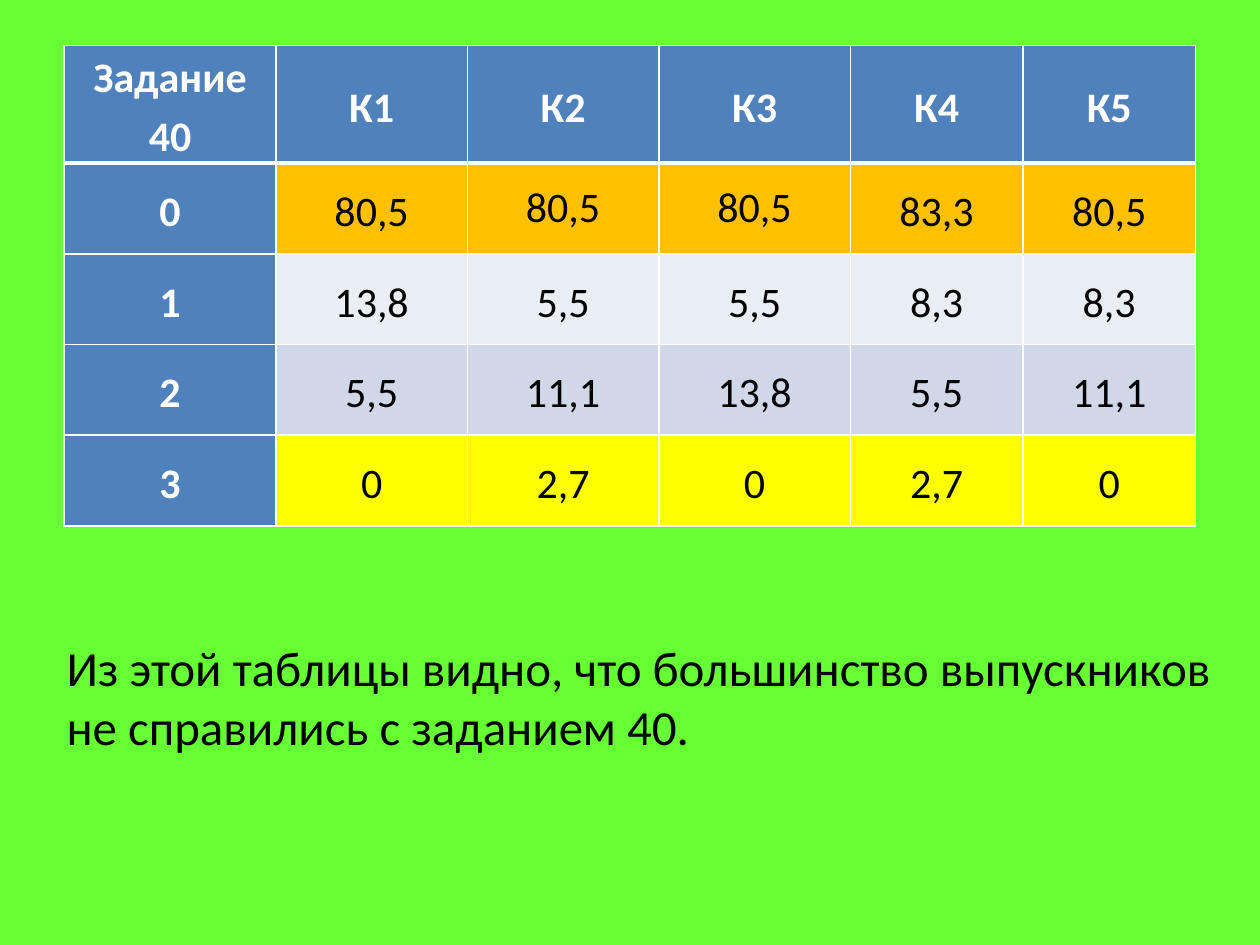
from dataclasses import dataclass

from lxml.etree import SubElement
from pptx import Presentation
from pptx.dml.color import RGBColor
from pptx.enum.text import MSO_ANCHOR, PP_ALIGN
from pptx.oxml.ns import qn
from pptx.util import Inches, Pt

FONT = "Calibri"
WHITE, BLACK, BLUE, GREEN = "FFFFFF", "000000", "4F81BD", "66FF33"
COLUMN_WIDTHS = (1.68, 1.52, 1.52, 1.52, 1.37, 1.37)
ROW_HEIGHT = 0.72
CELL_FORMAT = {
    "margin_left": Inches(0.07),
    "margin_right": Inches(0.07),
    "margin_top": 0,
    "margin_bottom": 0,
    "vertical_anchor": MSO_ANCHOR.MIDDLE,
}
SINGLE_SPACED = {(1, 2), (1, 3)}


@dataclass(frozen=True)
class ScoreRow:
    labels: tuple[str, ...]
    fill: str


SCORES = (
    ScoreRow(("Задание 40", "К1", "К2", "К3", "К4", "К5"), BLUE),
    ScoreRow(("0", "80,5", "80,5", "80,5", "83,3", "80,5"), "FFC000"),
    ScoreRow(("1", "13,8", "5,5", "5,5", "8,3", "8,3"), "E9EDF4"),
    ScoreRow(("2", "5,5", "11,1", "13,8", "5,5", "11,1"), "D0D8E8"),
    ScoreRow(("3", "0", "2,7", "0", "2,7", "0"), "FFFF00"),
)
CONCLUSION = (
    "Из этой таблицы видно, что большинство выпускников "
    "не справились с заданием 40."
)


def paint(fill, color: str) -> None:
    fill.solid()
    fill.fore_color.rgb = RGBColor.from_string(color)


def write(paragraph, text: str, size: int, color: str, bold: bool = False) -> None:
    run = paragraph.add_run()
    run.text = text
    for attribute, setting in {"name": FONT, "size": Pt(size), "bold": bold}.items():
        setattr(run.font, attribute, setting)
    run.font.color.rgb = RGBColor.from_string(color)


def add_borders(cell, widths: dict[str, int]) -> None:
    properties = cell._tc.get_or_add_tcPr()
    for side, width in widths.items():
        line = SubElement(properties, qn(f"a:ln{side}"), w=str(Pt(width)))
        solid = SubElement(line, qn("a:solidFill"))
        SubElement(solid, qn("a:srgbClr"), val=WHITE)


def format_cell(cell, text: str, fill: str, row: int, column: int) -> None:
    heading = row == 0 or column == 0
    for attribute, setting in CELL_FORMAT.items():
        setattr(cell, attribute, setting)
    add_borders(
        cell,
        {"L": 1, "R": 1, "T": 3 if row == 1 else 1, "B": 3 if row == 0 else 1},
    )
    paint(cell.fill, BLUE if heading else fill)
    paragraph = cell.text_frame.paragraphs[0]
    paragraph.alignment = PP_ALIGN.CENTER
    if (row, column) not in SINGLE_SPACED:
        paragraph.line_spacing = 1.15
    write(paragraph, text, 24, WHITE if heading else BLACK, heading)


def add_scores(slide) -> None:
    table = slide.shapes.add_table(
        len(SCORES), len(COLUMN_WIDTHS), Inches(0.51), Inches(0.36),
        Inches(sum(COLUMN_WIDTHS)), Inches(ROW_HEIGHT * len(SCORES)),
    ).table
    for column, width in zip(table.columns, COLUMN_WIDTHS):
        column.width = Inches(width)
    for row, score in enumerate(SCORES):
        for column, text in enumerate(score.labels):
            format_cell(table.cell(row, column), text, score.fill, row, column)


def add_conclusion(slide) -> None:
    frame = slide.shapes.add_textbox(
        Inches(0.43), Inches(5.01), Inches(9.29), Inches(1.04)
    ).text_frame
    frame.word_wrap = True
    write(frame.paragraphs[0], CONCLUSION, 28, BLACK)


def main() -> None:
    """Build the slide with the score table for task 40 and its conclusion."""
    presentation = Presentation()
    presentation.slide_width = Inches(10)
    presentation.slide_height = Inches(7.5)
    slide = presentation.slides.add_slide(presentation.slide_layouts[6])
    paint(slide.background.fill, GREEN)
    add_scores(slide)
    add_conclusion(slide)
    presentation.save("out.pptx")


if __name__ == "__main__":
    main()
